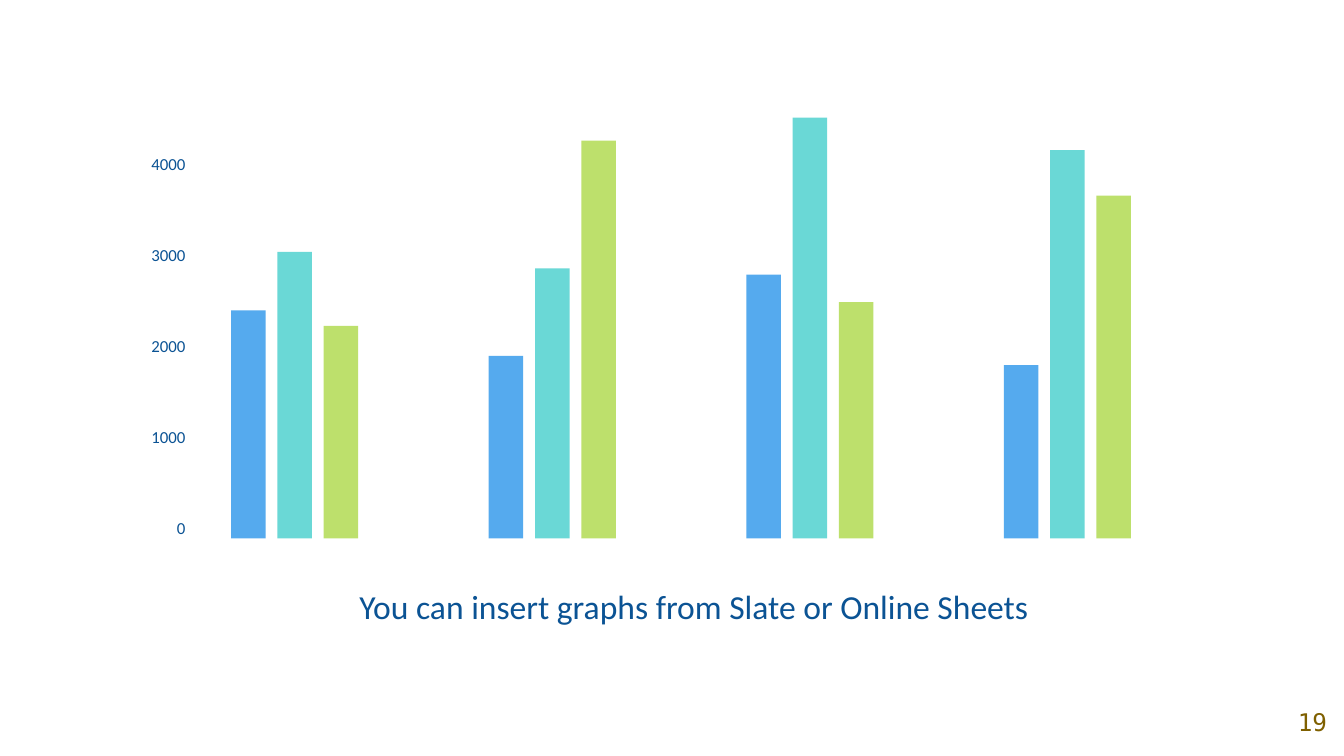
from pptx import Presentation
from pptx.dml.color import RGBColor
from pptx.enum.shapes import MSO_SHAPE
from pptx.enum.text import MSO_ANCHOR, PP_ALIGN
from pptx.util import Pt

RECTANGLE = MSO_SHAPE.RECTANGLE
TOP, MIDDLE = MSO_ANCHOR.TOP, MSO_ANCHOR.MIDDLE
CENTER, RIGHT = PP_ALIGN.CENTER, PP_ALIGN.RIGHT

COLORS = {
    "text": "0B5394",
    "number": "7F6000",
    "blue": "55AAEE",
    "teal": "6AD8D6",
    "green": "BDE06C",
}
SERIES_COLORS = ("blue", "teal", "green")
GROUPS = (
    (2500, 3140, 2330),
    (2000, 2960, 4360),
    (2890, 4610, 2590),
    (1900, 4255, 3755),
)
AXIS_LABELS = ("4000", "3000", "2000", "1000", "0")

BASELINE = 288.5
POINTS_PER_UNIT = 0.0489
FIRST_BAR_LEFT = 123.8
BAR_WIDTH = 18.5
BAR_STEP = 24.8
GROUP_STEP = 138


class SlideBuilder:
    def __init__(self, slide):
        self.slide = slide
        self.font = "Calibri"

    def text(self, box, lines, size, color="text", font=None, align=CENTER,
             anchor=TOP, inset=7.2, gap=0, line_spacing=None):
        """Write one paragraph per line, with gap points between paragraphs."""
        shape = self.slide.shapes.add_textbox(*(Pt(length) for length in box))
        frame = shape.text_frame
        frame_format = {"word_wrap": True, "vertical_anchor": anchor}
        for side in ("left", "top", "right", "bottom"):
            frame_format[f"margin_{side}"] = Pt(inset)
        self.apply(frame, frame_format)
        for index, line in enumerate(lines):
            paragraph = frame.add_paragraph() if index else frame.paragraphs[0]
            self.apply(paragraph, {"alignment": align, "line_spacing": line_spacing})
            if index and gap:
                paragraph.space_before = Pt(gap)
            run = paragraph.add_run()
            run.text = line
            self.apply(run.font, {"name": font or self.font, "size": Pt(size)})
            run.font.color.rgb = RGBColor.from_string(COLORS[color])

    def bar(self, left, value, color):
        height = value * POINTS_PER_UNIT
        shape = self.slide.shapes.add_shape(
            RECTANGLE, Pt(left), Pt(BASELINE - height), Pt(BAR_WIDTH), Pt(height))
        shape.shadow.inherit = False
        shape.fill.solid()
        shape.fill.fore_color.rgb = RGBColor.from_string(COLORS[color])
        shape.line.fill.background()

    @staticmethod
    def apply(target, values):
        for name, value in values.items():
            setattr(target, name, value)


def main():
    presentation = Presentation()
    presentation.slide_width, presentation.slide_height = Pt(720), Pt(405)
    builder = SlideBuilder(presentation.slides.add_slide(presentation.slide_layouts[6]))

    builder.text((72.7, 305.3, 598.3, 41), ["You can insert graphs from Slate or Online Sheets"],
                 18, line_spacing=1.06)
    builder.text((686.2, 368, 33.8, 37), ["19"], 13, color="number",
                 font="DejaVu Sans Mono", anchor=MIDDLE)
    builder.text((74.9, 82.1, 24.5, 213), AXIS_LABELS, 9, align=RIGHT, inset=0, gap=38)

    for group, values in enumerate(GROUPS):
        for series, (value, color) in enumerate(zip(values, SERIES_COLORS)):
            left = FIRST_BAR_LEFT + group * GROUP_STEP + series * BAR_STEP
            builder.bar(left, value, color)

    presentation.save("out.pptx")


if __name__ == "__main__":
    main()
